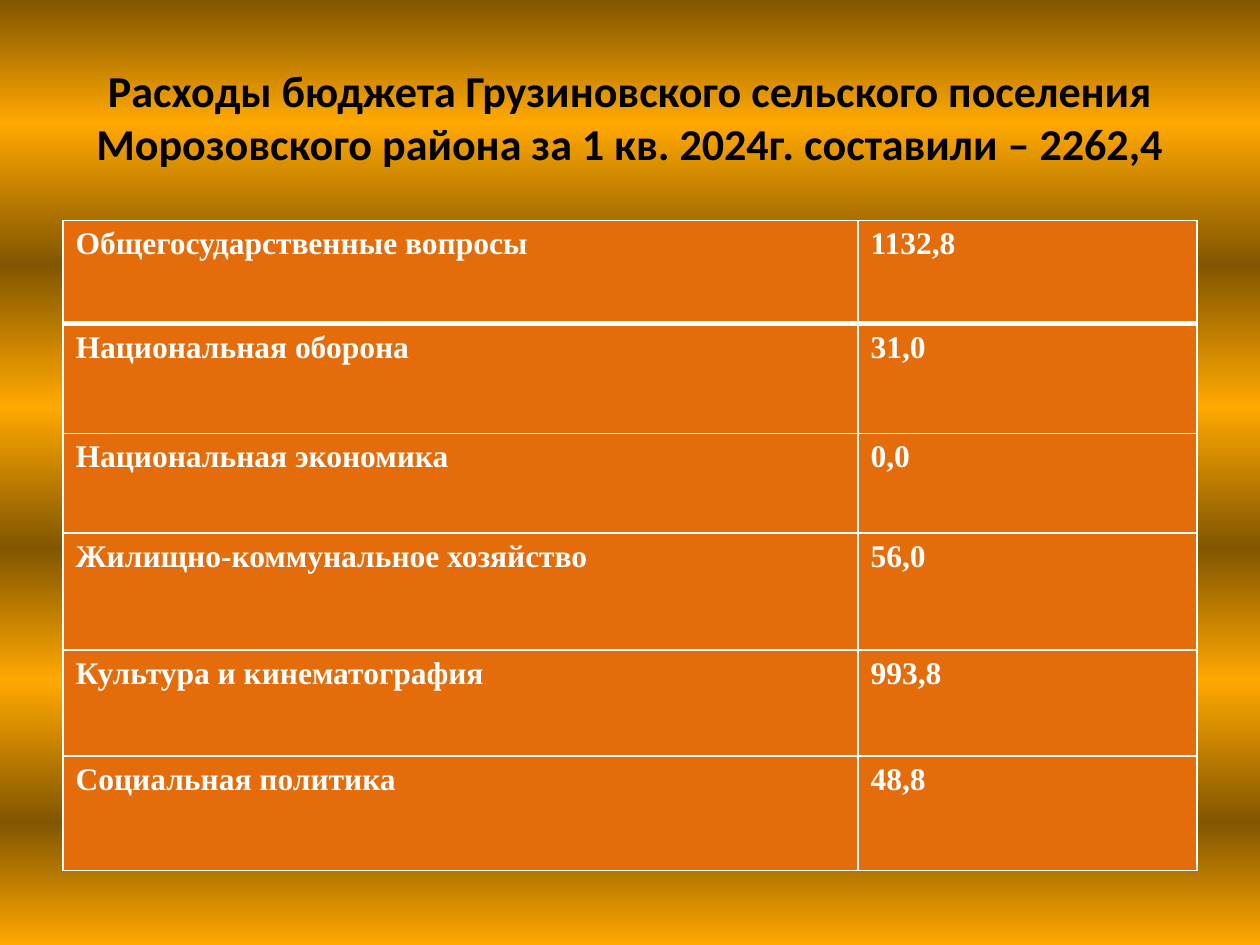
from dataclasses import dataclass

from lxml import etree
from pptx import Presentation
from pptx.dml.color import RGBColor
from pptx.enum.text import MSO_ANCHOR, PP_ALIGN
from pptx.oxml.ns import qn
from pptx.util import Inches, Pt

MIDDLE = MSO_ANCHOR.MIDDLE
CENTER = PP_ALIGN.CENTER
TITLE_ONLY = 5


@dataclass(frozen=True)
class Theme:
    dark_gold: str = "825600"
    bright_gold: str = "FFA800"
    cell: str = "E46C0A"
    white: str = "FFFFFF"
    black: str = "000000"
    title_font: str = "Calibri"
    table_font: str = "Times New Roman"
    title_size: float = 25.2
    table_size: float = 18
    thin: float = 1
    thick: float = 3


THEME = Theme()
GRADIENT_STOPS = [0, 13, 28, 43, 58, 72, 87, 100]
TITLE = ("Расходы бюджета Грузиновского сельского поселения "
         "Морозовского района за 1 кв. 2024г. составили – 2262,4")
EXPENSES = [
    ("Общегосударственные вопросы", "1132,8", 0.82),
    ("Национальная оборона", "31,0", 0.87),
    ("Национальная экономика", "0,0", 0.79),
    ("Жилищно-коммунальное хозяйство", "56,0", 0.93),
    ("Культура и кинематография", "993,8", 0.84),
    ("Социальная политика", "48,8", 0.91),
]
COLUMN_WIDTHS = [6.31, 2.69]


def apply_format(target, values):
    for name, value in values.items():
        setattr(target, name, value)


def write_text(frame, text, font_name, size, color):
    paragraph = frame.paragraphs[0]
    run = paragraph.add_run()
    run.text = text
    apply_format(run.font, {"name": font_name, "size": Pt(size), "bold": True})
    run.font.color.rgb = RGBColor.from_string(color)
    return paragraph


def paint_background(slide):
    fill = slide.background.fill
    fill.gradient()
    fill.gradient_angle = 270
    stops = next(slide.element.iter(qn("a:gsLst")))
    for stop in list(stops):
        stops.remove(stop)
    for index, position in enumerate(GRADIENT_STOPS):
        stop = etree.SubElement(stops, qn("a:gs"), pos=str(position * 1000))
        color = THEME.bright_gold if index % 2 else THEME.dark_gold
        etree.SubElement(stop, qn("a:srgbClr"), val=color)


def add_title(slide):
    title = slide.shapes.title
    apply_format(title, {"left": Inches(0.5), "top": Inches(0.3),
                         "width": Inches(9), "height": Inches(1.25)})
    apply_format(title.text_frame, {"word_wrap": True, "vertical_anchor": MIDDLE})
    heading = write_text(title.text_frame, TITLE, THEME.title_font,
                         THEME.title_size, THEME.black)
    heading.alignment = CENTER


def set_borders(cell, top, bottom):
    properties = cell._tc.get_or_add_tcPr()
    widths = {"a:lnL": THEME.thin, "a:lnR": THEME.thin, "a:lnT": top, "a:lnB": bottom}
    for side, width in widths.items():
        border = etree.SubElement(properties, qn(side), w=str(Pt(width)))
        solid = etree.SubElement(border, qn("a:solidFill"))
        etree.SubElement(solid, qn("a:srgbClr"), val=THEME.white)


def add_expense_table(slide):
    table = slide.shapes.add_table(
        len(EXPENSES), len(COLUMN_WIDTHS), Inches(0.5), Inches(1.75),
        Inches(sum(COLUMN_WIDTHS)), Inches(sum(row[2] for row in EXPENSES))).table
    for column, width in zip(table.columns, COLUMN_WIDTHS):
        column.width = Inches(width)
    for index, (category, amount, height) in enumerate(EXPENSES):
        table.rows[index].height = Inches(height)
        top = THEME.thick if index == 1 else THEME.thin
        bottom = THEME.thick if index == 0 else THEME.thin
        for cell, text in zip(table.rows[index].cells, (category, amount)):
            set_borders(cell, top, bottom)
            cell.fill.solid()
            cell.fill.fore_color.rgb = RGBColor.from_string(THEME.cell)
            write_text(cell.text_frame, text, THEME.table_font,
                       THEME.table_size, THEME.white)


def main():
    presentation = Presentation()
    apply_format(presentation, {"slide_width": Inches(10), "slide_height": Inches(7.5)})
    slide = presentation.slides.add_slide(presentation.slide_layouts[TITLE_ONLY])
    paint_background(slide)
    add_title(slide)
    add_expense_table(slide)
    presentation.save("out.pptx")


if __name__ == "__main__":
    main()
